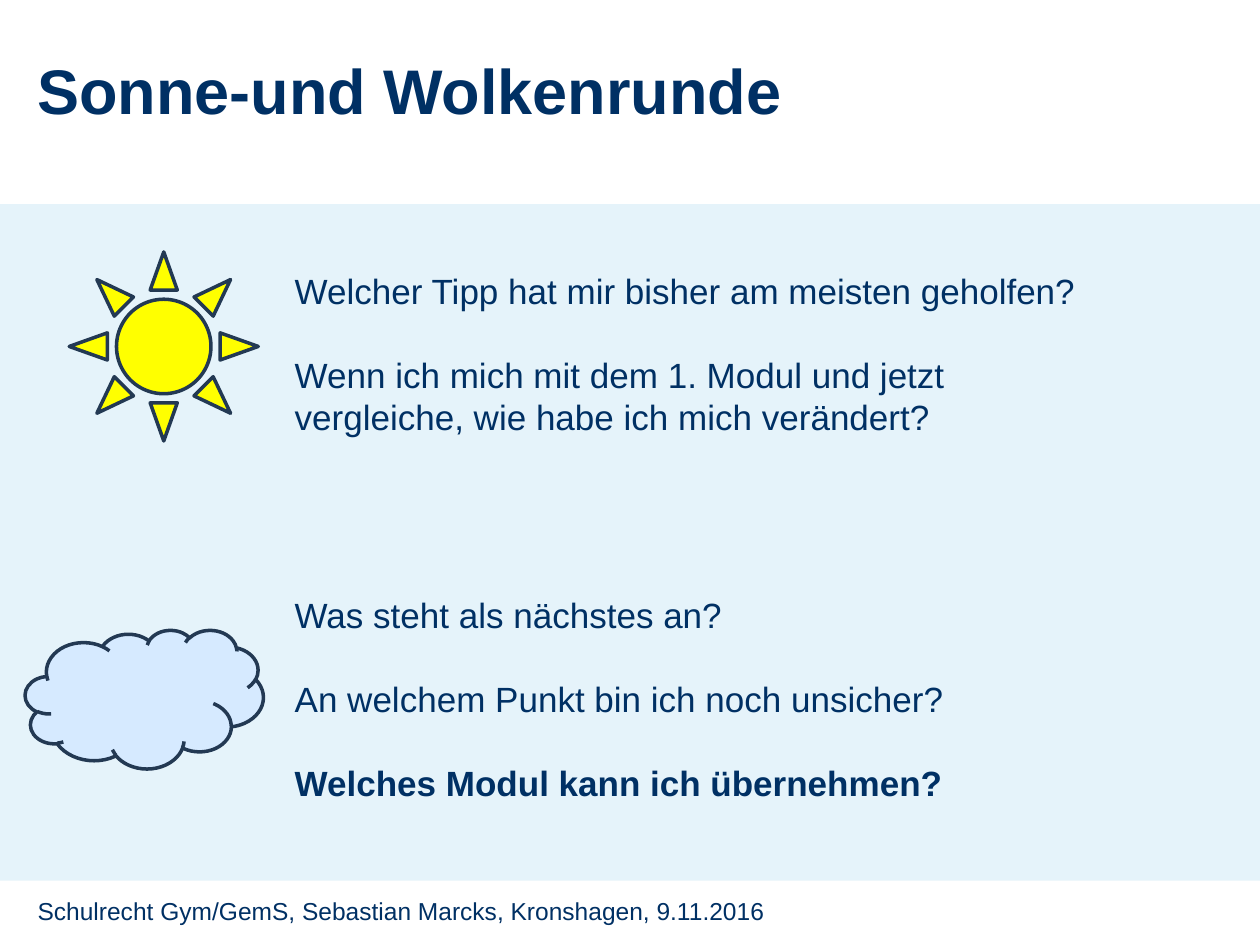
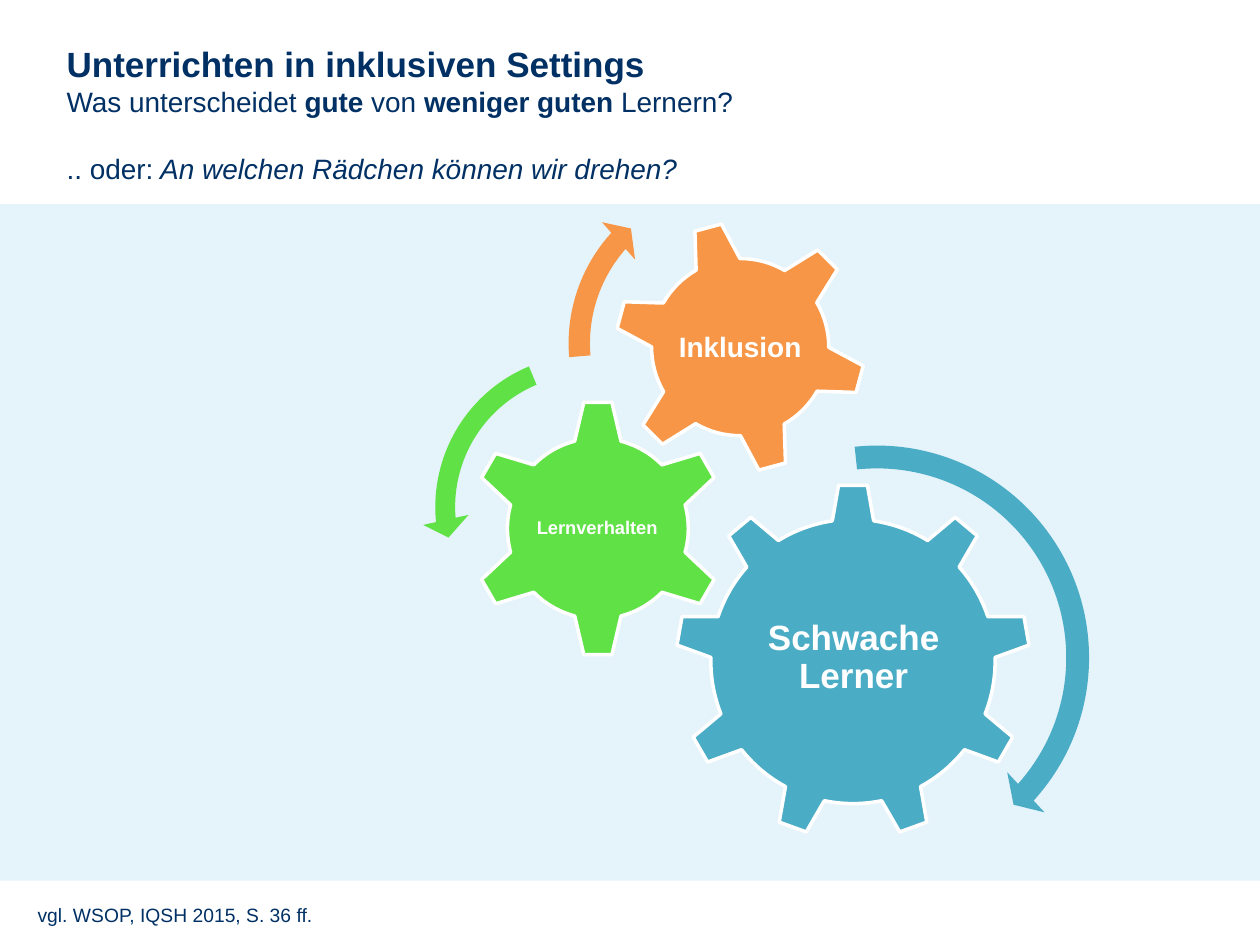
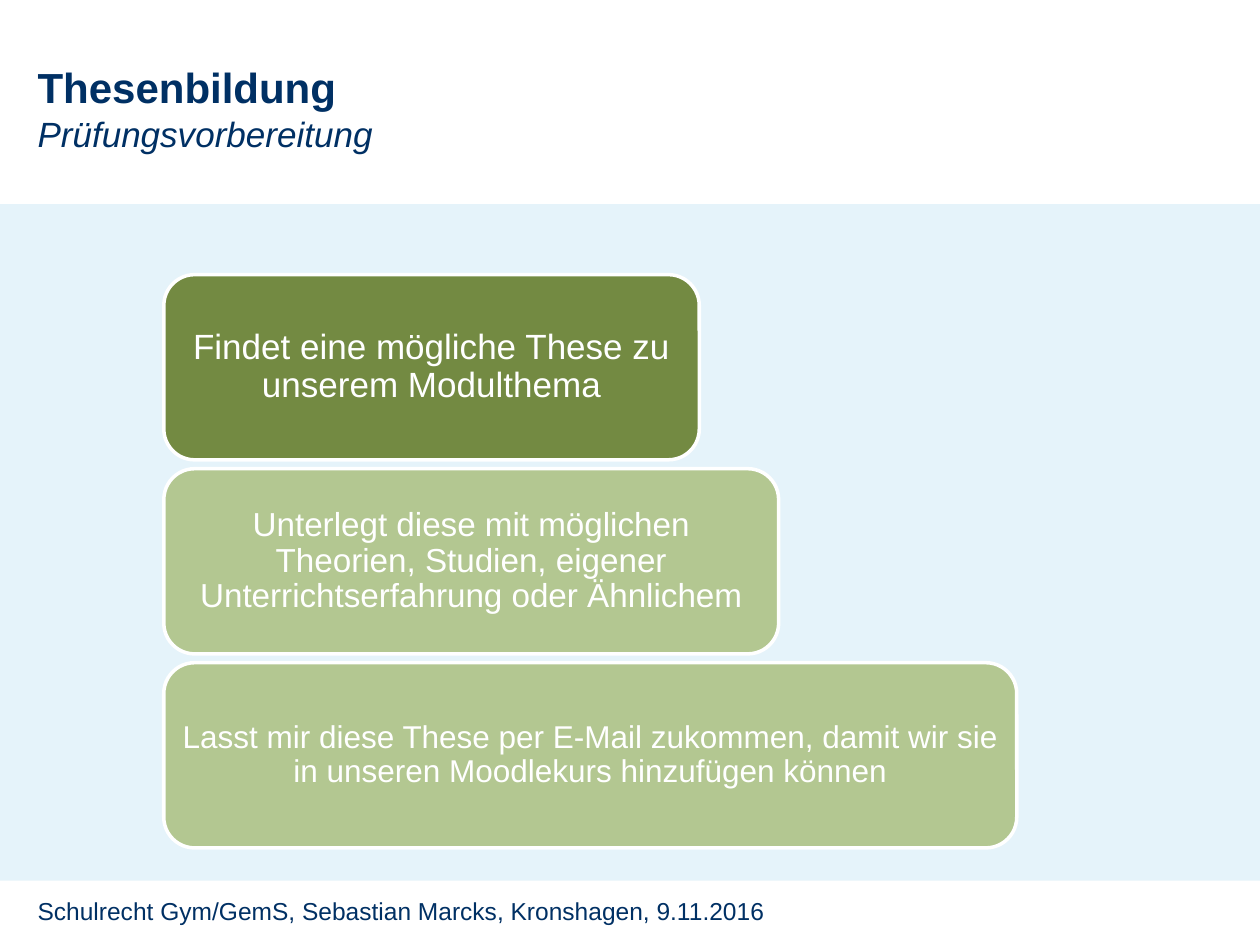
import pptx
import pptx.util
import pptx.dml.color
import pptx.enum.shapes
import pptx.enum.text
import pptx.oxml.ns
import lxml.etree

Inches = pptx.util.Inches
Pt = pptx.util.Pt
RGBColor = pptx.dml.color.RGBColor
Shapes = pptx.enum.shapes.MSO_SHAPE
Anchor = pptx.enum.text.MSO_ANCHOR
Align = pptx.enum.text.PP_ALIGN

NAVY = RGBColor(0x00, 0x30, 0x64)
WHITE = RGBColor(0xFF, 0xFF, 0xFF)
BAND_BLUE = RGBColor(0x00, 0x8C, 0xCF)
OUTLINE = RGBColor(0x23, 0x39, 0x53)
SUN_YELLOW = RGBColor(0xFF, 0xFF, 0x00)
CLOUD_BLUE = RGBColor(0xD6, 0xEA, 0xFF)
TEAL = RGBColor(0x4B, 0xAC, 0xC6)
GREEN = RGBColor(0x60, 0xE1, 0x46)
ORANGE = RGBColor(0xF7, 0x96, 0x46)
DARK_OLIVE = RGBColor(0x73, 0x8A, 0x42)
LIGHT_OLIVE = RGBColor(0xB3, 0xC7, 0x91)

BOLD = {"bold": True}
ITALIC = {"italic": True}
COURSE = "Schulrecht Gym/GemS, Sebastian Marcks, Kronshagen, 9.11.2016"
LINE_HEIGHT = 1.2


class Deck:
    """Holds the shared style and the slide being built."""

    def __init__(self):
        self.presentation = pptx.Presentation()
        self.presentation.slide_width = Inches(10)
        self.presentation.slide_height = Inches(7.5)
        self.slide = None

    def new_slide(self):
        """Start a slide with the pale content band."""
        self.slide = self.presentation.slides.add_slide(self.presentation.slide_layouts[6])
        band = self.shape(Shapes.RECTANGLE, (0, 1.62, 10, 5.37), BAND_BLUE)
        tint = band.element.spPr.find(".//" + pptx.oxml.ns.qn("a:srgbClr"))
        lxml.etree.SubElement(tint, pptx.oxml.ns.qn("a:alpha"), val="10000")

    def shape(self, kind, place, fill, outline=None, adjustments=(), rotation=0):
        """Add a preset shape with a flat fill."""
        shape = self.slide.shapes.add_shape(kind, *map(Inches, place))
        shape.shadow.inherit = False
        shape.rotation = rotation
        shape.fill.solid()
        shape.fill.fore_color.rgb = fill
        if outline is None:
            shape.line.fill.background()
        else:
            shape.line.color.rgb = outline
            shape.line.width = Pt(2)
        for index, value in enumerate(adjustments):
            shape.adjustments[index] = value
        return shape

    def fill_frame(self, frame, paragraphs, size, color=NAVY, **layout):
        """Fill a frame with paragraphs of (runs, gap in blank lines)."""
        frame.word_wrap = True
        for index, (runs, gap) in enumerate(paragraphs):
            paragraph = frame.paragraphs[0] if index == 0 else frame.add_paragraph()
            for name, value in layout.items():
                setattr(paragraph, name, value)
            for text, changes in runs:
                run = paragraph.add_run()
                run.text = text
                style = {"name": "Arial", "size": Pt(size), "bold": False} | changes
                for name, value in style.items():
                    setattr(run.font, name, value)
                run.font.color.rgb = color
            if gap:
                paragraph.space_before = Pt(gap * size * LINE_HEIGHT)

    def text(self, place, paragraphs, size):
        """Add a left-aligned text box."""
        box = self.slide.shapes.add_textbox(*map(Inches, place))
        self.fill_frame(box.text_frame, paragraphs, size)

    def centred(self, shape, text, size, inset, changes):
        """Set white text in the middle of a shape."""
        frame = shape.text_frame
        margins = dict(zip(("left", "top", "right", "bottom"), inset * 2))
        for side, margin in margins.items():
            setattr(frame, "margin_" + side, Inches(margin))
        frame.vertical_anchor = Anchor.MIDDLE
        self.fill_frame(frame, [([(text, changes)], 0)], size, WHITE,
                        alignment=Align.CENTER, line_spacing=0.9)

    def gear(self, kind, place, fill, label_place, label, size, rotation=0):
        """Add a gear with an upright label."""
        self.shape(kind, place, fill, WHITE, rotation=rotation)
        box = self.slide.shapes.add_textbox(*map(Inches, label_place))
        self.centred(box, label, size, (0.02, 0.02), BOLD)

    def footer(self):
        """Add the course line below the band."""
        self.text((0.2, 7.06, 8.58, 0.52), [([(COURSE, {})], 0)], 14)


def sun_and_cloud(deck):
    """Build the feedback round."""
    deck.new_slide()
    deck.footer()
    deck.text((0.2, 0.36, 6.22, 0.71), [([("Sonne-und Wolkenrunde", BOLD)], 0)], 36)
    deck.shape(Shapes.SUN, (0.55, 2, 1.5, 1.5), SUN_YELLOW, OUTLINE)
    deck.shape(Shapes.CLOUD, (0.2, 5, 1.89, 1.1), CLOUD_BLUE, OUTLINE)
    deck.text((2.24, 2.09, 6.69, 1.45), [
        ([("Welcher Tipp hat mir bisher am meisten geholfen?", {})], 0),
        ([("Wenn ich mich mit dem 1. Modul und jetzt vergleiche, "
           "wie habe ich mich verändert?", {})], 1),
    ], 20)
    deck.text((2.24, 4.66, 5.91, 1.78), [
        ([("Was steht als nächstes an?", {})], 0),
        ([("An welchem Punkt bin ich noch unsicher?", {})], 1),
        ([("Welches Modul kann ich übernehmen?", BOLD)], 1),
    ], 20)


def gears(deck):
    """Build the interlocking gears."""
    deck.new_slide()
    deck.text((0.43, 0.29, 6.38, 1.25), [
        ([("Unterrichten in inklusiven Settings", BOLD | {"size": Pt(20)})], 0),
        ([("Was unterscheidet ", {}), ("gute", BOLD), (" von ", {}),
          ("weniger guten ", BOLD), ("Lernern?", {})], 0),
        ([(".. oder:", {}), (" An welchen Rädchen können wir drehen?", ITALIC)], 1),
    ], 16)
    deck.text((0.2, 7.12, 5.28, 0.29), [([("vgl. WSOP, IQSH 2015, S. 36 ff.", {})], 0)], 11)
    deck.gear(Shapes.GEAR_9, (5.36, 3.84, 2.82, 2.82), TEAL,
              (5.93, 4.5, 1.69, 1.45), "Schwache Lerner", 20)
    deck.gear(Shapes.GEAR_6, (3.72, 3.17, 2.05, 2.05), GREEN,
              (4.23, 3.69, 1.02, 1.01), "Lernverhalten", 10.5)
    deck.gear(Shapes.GEAR_6, (4.87, 1.75, 2.01, 2.01), ORANGE,
              (5.31, 2.2, 1.13, 1.13), "Inklusion", 16, rotation=345)
    for kind, place, fill, bend in (
        (Shapes.CIRCULAR_ARROW, (5.15, 3.41, 3.62, 3.62), TEAL,
         (0.05, 2.99, 25.27, 158.38, 0.06)),
        (Shapes.LEFT_CIRCULAR_ARROW, (3.35, 2.71, 2.63, 2.63), GREEN,
         (0.06, 4.3, 104.89, 148.38, 0.07)),
        (Shapes.CIRCULAR_ARROW, (4.4, 1.31, 2.83, 2.83), ORANGE,
         (0.06, 3.94, 133.14, 105.08, 0.07)),
    ):
        deck.shape(kind, place, fill, adjustments=bend)


def theses(deck):
    """Build the three steps towards a thesis."""
    deck.new_slide()
    deck.footer()
    deck.text((0.2, 0.44, 4.73, 0.84), [
        ([("Thesenbildung", BOLD | {"size": Pt(24)})], 0),
        ([("Prüfungsvorbereitung", ITALIC)], 0),
    ], 20)
    steps = (
        (4.25, DARK_OLIVE, 20, "Findet eine mögliche These zu unserem Modulthema"),
        (4.88, LIGHT_OLIVE, 19, "Unterlegt diese mit möglichen Theorien, Studien, "
                                "eigener Unterrichtserfahrung oder Ähnlichem"),
        (6.77, LIGHT_OLIVE, 18, "Lasst mir diese These per E-Mail zukommen, damit wir "
                                "sie in unseren Moodlekurs hinzufügen können"),
    )
    top, height, gap = 2.18, 1.47, 0.07
    for index, (width, fill, size, task) in enumerate(steps):
        place = (1.3, top + index * (height + gap), width, height)
        step = deck.shape(Shapes.ROUNDED_RECTANGLE, place, fill, WHITE)
        deck.centred(step, task, size, (0.07, 0.04), {})


def main():
    """Build and save the slides."""
    deck = Deck()
    for build in (sun_and_cloud, gears, theses):
        build(deck)
    deck.presentation.save("out.pptx")


if __name__ == "__main__":
    main()
